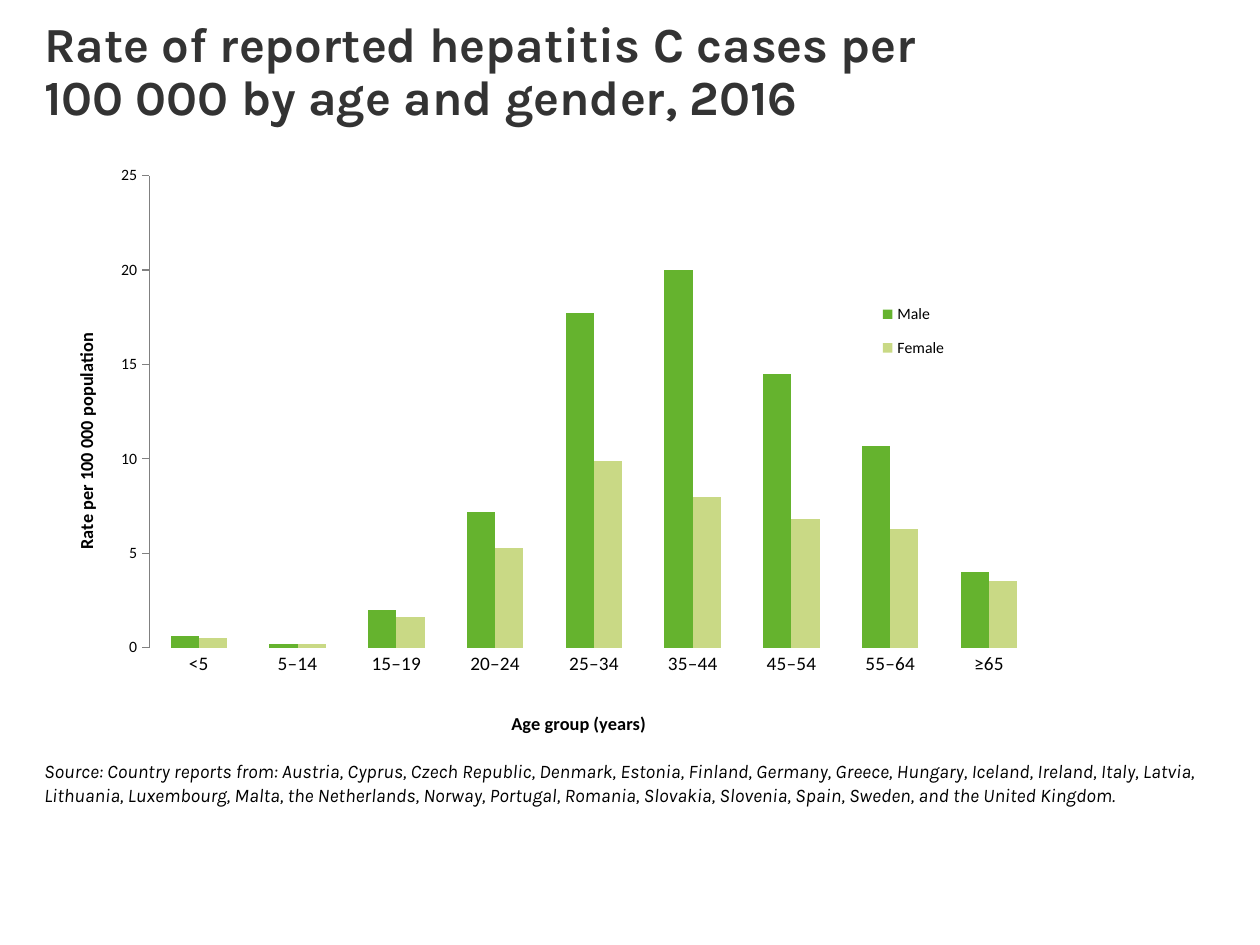
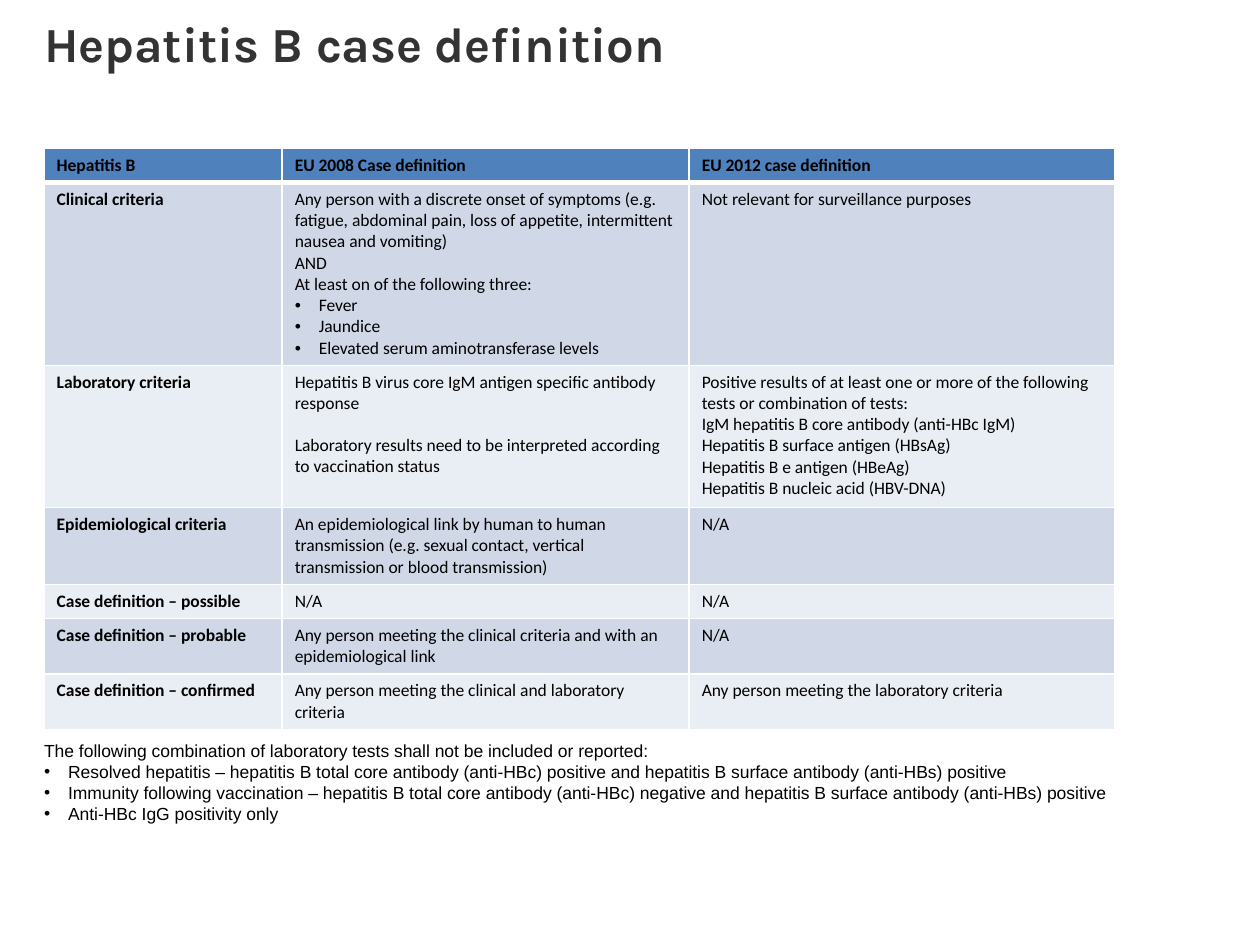
"""Build two slides on hepatitis surveillance: a rate chart and a case definition table."""
from dataclasses import dataclass

from lxml.etree import SubElement
from pptx import Presentation
from pptx.chart.data import CategoryChartData
from pptx.dml.color import RGBColor
from pptx.enum.chart import XL_CHART_TYPE as CT, XL_LEGEND_POSITION as LP, XL_TICK_MARK as TM
from pptx.enum.text import MSO_ANCHOR, MSO_AUTO_SIZE, PP_ALIGN
from pptx.oxml import parse_xml
from pptx.oxml.ns import nsdecls, qn
from pptx.util import Inches, Pt

COLORS = {
    "title": "333333", "text": "000000", "axis": "808080", "border": "FFFFFF",
    "male": "65B32E", "female": "C9D985",
    "header": "4F81BD", "dark_row": "D0D8E8", "light_row": "E9EDF4",
}
LEFT = 0.35


@dataclass(frozen=True)
class Para:
    text: str
    bullet: bool = False
    before: float = 0


@dataclass(frozen=True)
class Style:
    font: str
    size: float
    color: str = "text"
    bold: bool = False
    italic: bool = False
    spacing: float = 1.0


@dataclass(frozen=True)
class Row:
    height: float
    cells: tuple


TITLE = Style("Karla", 28, "title", bold=True, spacing=0.9)
SOURCE = Style("Karla", 11, italic=True)
NOTE = Style("Arial", 10)
CELL = Style("Calibri", 10)
CELL_BOLD = Style("Calibri", 10, bold=True)
CHART = Style("Calibri", 9)
CATEGORY = Style("Calibri", 11)
AXIS_TITLE = Style("Calibri", 10.5, bold=True)

AGES = ("<5", "5–14", "15–19", "20–24", "25–34", "35–44", "45–54", "55–64", "≥65")
RATES = {
    "Male": (0.6, 0.2, 2, 7.2, 17.7, 20, 14.5, 10.7, 4),
    "Female": (0.5, 0.2, 1.6, 5.3, 9.9, 8, 6.8, 6.3, 3.5),
}
SOURCE_TEXT = (
    "Source: Country reports from: Austria, Cyprus, Czech Republic, Denmark, Estonia, Finland, "
    "Germany, Greece, Hungary, Iceland, Ireland, Italy, Latvia, Lithuania, Luxembourg, Malta, "
    "the Netherlands, Norway, Portugal, Romania, Slovakia, Slovenia, Spain, Sweden, "
    "and the United Kingdom."
)
COLUMN_WIDTHS = (1.89, 3.23, 3.38)
DEFINITIONS = (
    Row(0.27, ("Hepatitis B", "EU 2008 Case definition", "EU 2012 case definition")),
    Row(1.45, (
        "Clinical criteria",
        (
            Para("Any person with a discrete onset of symptoms (e.g. fatigue, abdominal pain, "
                 "loss of appetite, intermittent nausea and vomiting)"),
            Para("AND"),
            Para("At least on of the following three:"),
            Para("Fever", bullet=True),
            Para("Jaundice", bullet=True),
            Para("Elevated serum aminotransferase levels", bullet=True),
        ),
        "Not relevant for surveillance purposes",
    )),
    Row(1.13, (
        "Laboratory criteria",
        (
            Para("Hepatitis B virus core IgM antigen specific antibody response"),
            Para("Laboratory results need to be interpreted according to vaccination status",
                 before=12),
        ),
        (
            Para("Positive results of at least one or more of the following tests "
                 "or combination of tests:"),
            Para("IgM hepatitis B core antibody (anti-HBc IgM)"),
            Para("Hepatitis B surface antigen (HBsAg)"),
            Para("Hepatitis B e antigen (HBeAg)"),
            Para("Hepatitis B nucleic acid (HBV-DNA)"),
        ),
    )),
    Row(0.61, (
        "Epidemiological criteria",
        "An epidemiological link by human to human transmission "
        "(e.g. sexual contact, vertical transmission or blood transmission)",
        "N/A",
    )),
    Row(0.27, ("Case definition – possible", "N/A", "N/A")),
    Row(0.44, (
        "Case definition – probable",
        "Any person meeting the clinical criteria and with an epidemiological link",
        "N/A",
    )),
    Row(0.44, (
        "Case definition – confirmed",
        "Any person meeting the clinical and laboratory criteria",
        "Any person meeting the laboratory criteria",
    )),
)
EXCLUSIONS = (
    Para("The following combination of laboratory tests shall not be included or reported:"),
    Para("Resolved hepatitis – hepatitis B total core antibody (anti‐HBc) positive and "
         "hepatitis B surface antibody (anti‐HBs) positive", bullet=True),
    Para("Immunity following vaccination – hepatitis B total core antibody (anti‐HBc) negative "
         "and hepatitis B surface antibody (anti‐HBs) positive", bullet=True),
    Para("Anti‐HBc IgG positivity only", bullet=True),
)


def rgb(name: str) -> RGBColor:
    return RGBColor.from_string(COLORS[name])


def style_font(font, style: Style) -> None:
    font.name, font.size = style.font, Pt(style.size)
    font.bold, font.italic = style.bold, style.italic
    font.color.rgb = rgb(style.color)


def set_bullet(p, bullet: bool) -> None:
    indent = Inches(0.19) if bullet else 0
    pPr = p._p.get_or_add_pPr()
    pPr.set("marL", str(indent))
    pPr.set("indent", str(-indent))
    if bullet:
        SubElement(pPr, qn("a:buFont"), typeface="Arial")
        SubElement(pPr, qn("a:buChar"), char="•")
    else:
        SubElement(pPr, qn("a:buNone"))


def write(tf, content, style: Style) -> None:
    paras = (Para(content),) if isinstance(content, str) else content
    for i, para in enumerate(paras):
        p = tf.add_paragraph() if i else tf.paragraphs[0]
        set_bullet(p, para.bullet)
        p.text = para.text
        p.alignment = PP_ALIGN.LEFT
        p.space_before, p.space_after = Pt(para.before), Pt(0)
        p.line_spacing = style.spacing
        for r in p.runs:
            style_font(r.font, style)


def place_text(sp, top: float, width: float, height: float, content, style: Style) -> None:
    sp.left, sp.top = Inches(LEFT), Inches(top)
    sp.width, sp.height = Inches(width), Inches(height)
    tf = sp.text_frame
    tf.margin_left = tf.margin_top = tf.margin_right = tf.margin_bottom = 0
    tf.word_wrap = True
    tf.auto_size = MSO_AUTO_SIZE.NONE
    tf.vertical_anchor = MSO_ANCHOR.TOP
    write(tf, content, style)


def add_slide(prs, layout: int, title: str):
    s = prs.slides.add_slide(prs.slide_layouts[layout])
    place_text(s.shapes.title, 0.16, 9.06, 0.91, title, TITLE)
    return s


def set_layout(element, x: float, y: float, w: float = 0, h: float = 0) -> None:
    old = element.find(qn("c:layout"))
    if old is not None:
        element.remove(old)
    layout = parse_xml(f"<c:layout {nsdecls('c')}><c:manualLayout/></c:layout>")
    manual = layout[0]
    if w:
        SubElement(manual, qn("c:layoutTarget"), val="inner")
    for axis in "xy":
        SubElement(manual, qn(f"c:{axis}Mode"), val="edge")
    for key, value in zip("xywh", (x, y, w, h)):
        if value:
            SubElement(manual, qn(f"c:{key}"), val=str(value))
    overlay = element.find(qn("c:overlay"))
    if overlay is None:
        element.insert(0, layout)
    else:
        overlay.addprevious(layout)


def title_axis(axis, text: str, x: float, y: float) -> None:
    axis.has_title = True
    title = axis.axis_title
    title.text_frame.text = text
    style_font(title.text_frame.paragraphs[0].runs[0].font, AXIS_TITLE)
    set_layout(title._element, x, y)


def add_rate_chart(s) -> None:
    data = CategoryChartData()
    data.categories = AGES
    for name, rates in RATES.items():
        data.add_series(name, rates)
    chart = s.shapes.add_chart(CT.COLUMN_CLUSTERED, Inches(0.39), Inches(1.18),
                               Inches(8.47), Inches(4.7), data).chart
    chart.has_title = False
    style_font(chart.font, CHART)
    set_layout(chart._chartSpace.find(f".//{qn('c:plotArea')}"), 0.094, 0.046, 0.833, 0.802)

    plot = chart.plots[0]
    plot.gap_width, plot.overlap = 150, 0
    plot.vary_by_categories = False
    for series in plot.series:
        series.format.fill.solid()
        series.format.fill.fore_color.rgb = rgb(series.name.lower())

    ages, rates = chart.category_axis, chart.value_axis
    ages.major_tick_mark = TM.NONE
    ages.format.line.fill.background()
    style_font(ages.tick_labels.font, CATEGORY)
    title_axis(ages, "Age group (years)", 0.43, 0.95)

    rates.minimum_scale, rates.maximum_scale, rates.major_unit = 0, 25, 5
    rates.has_major_gridlines = False
    rates.major_tick_mark = TM.OUTSIDE
    rates.tick_labels.number_format = "0"
    rates.tick_labels.number_format_is_linked = False
    rates.format.line.color.rgb = rgb("axis")
    title_axis(rates, "Rate per 100 000 population", 0.02, 0.31)

    chart.has_legend = True
    legend = chart.legend
    legend.position = LP.RIGHT
    legend.include_in_layout = False
    style_font(legend.font, CHART)
    set_layout(legend._element, 0.76, 0.24, 0.1, 0.14)


def set_borders(cell, header: bool) -> None:
    tcPr = cell._tc.get_or_add_tcPr()
    for i, side in enumerate("LRTB"):
        width = Pt(3 if header and side == "B" else 1)
        tcPr.insert(i, parse_xml(
            f'<a:ln{side} {nsdecls("a")} w="{width}"><a:solidFill>'
            f'<a:srgbClr val="{COLORS["border"]}"/></a:solidFill></a:ln{side}>'))


def add_definition_table(s) -> None:
    table = s.shapes.add_table(
        len(DEFINITIONS), len(COLUMN_WIDTHS), Inches(LEFT), Inches(1.18),
        Inches(sum(COLUMN_WIDTHS)), Inches(sum(row.height for row in DEFINITIONS))).table
    for column, width in zip(table.columns, COLUMN_WIDTHS):
        column.width = Inches(width)
    for i, row in enumerate(DEFINITIONS):
        table.rows[i].height = Inches(row.height)
        fill = "header" if i == 0 else ("light_row", "dark_row")[i % 2]
        for j, content in enumerate(row.cells):
            cell = table.cell(i, j)
            cell.fill.solid()
            cell.fill.fore_color.rgb = rgb(fill)
            set_borders(cell, header=i == 0)
            write(cell.text_frame, content, CELL_BOLD if i == 0 or j == 0 else CELL)


def main() -> None:
    prs = Presentation()
    prs.slide_width, prs.slide_height = Inches(10), Inches(7.5)

    s = add_slide(prs, 5, "Rate of reported hepatitis C cases per\v100 000 by age and gender, 2016")
    add_rate_chart(s)
    source = s.shapes.add_textbox(0, 0, 0, 0)
    place_text(source, 6.03, 9.21, 0.56, SOURCE_TEXT, SOURCE)

    s = add_slide(prs, 1, "Hepatitis B case definition")
    add_definition_table(s)
    place_text(s.placeholders[1], 5.87, 9.32, 0.94, EXCLUSIONS, NOTE)

    prs.save("out.pptx")


if __name__ == "__main__":
    main()
